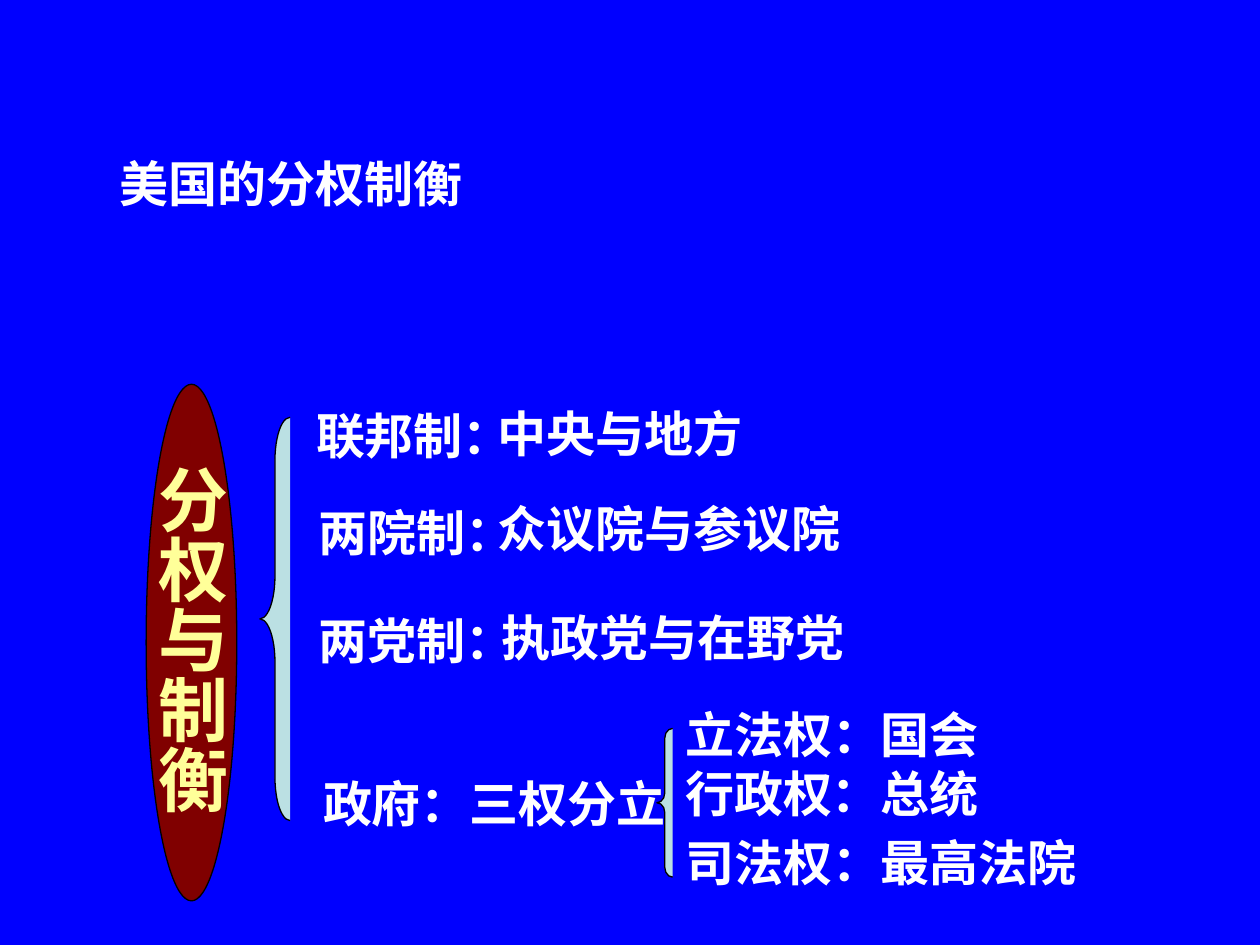
import pptx
import pptx.dml.color
import pptx.enum.lang
import pptx.enum.shapes
import pptx.enum.text
import pptx.util
from dataclasses import dataclass

Pt = pptx.util.Pt
Shape = pptx.enum.shapes.MSO_SHAPE


@dataclass(frozen=True)
class Theme:
    background: str = "0000FF"
    text: str = "FFFFFF"
    highlight: str = "FFFF99"
    oval: str = "800000"
    brace: str = "BBE0E3"
    outline: str = "000000"
    body_size: int = 28
    oval_size: int = 40
    title_font: str = "Noto Sans CJK SC"
    body_font: str = "Arial"
    oval_font: str = "DejaVu Sans"


theme = Theme()
rgb = pptx.dml.color.RGBColor.from_string

deck = pptx.Presentation()
deck.slide_width, deck.slide_height = Pt(720), Pt(540)
slide = deck.slides.add_slide(deck.slide_layouts[6])
slide.background.fill.solid()
slide.background.fill.fore_color.rgb = rgb(theme.background)


def add_text(text, *, left, top, width, height=41, size=theme.body_size,
             font=theme.body_font, color=theme.text, wrap=True, vertical=False):
    box = slide.shapes.add_textbox(Pt(left), Pt(top), Pt(width), Pt(height))
    frame = box.text_frame
    frame.word_wrap = wrap
    frame.auto_size = pptx.enum.text.MSO_AUTO_SIZE.SHAPE_TO_FIT_TEXT
    if vertical:
        frame._txBody.bodyPr.set("vert", "eaVert")
    run = frame.paragraphs[0].add_run()
    run.text = text
    run.font.name = font
    run.font.size = Pt(size)
    run.font.bold = True
    run.font.color.rgb = rgb(color)
    run.font.language_id = pptx.enum.lang.MSO_LANGUAGE_ID.SIMPLIFIED_CHINESE


def add_outlined(kind, left, top, width, height, fill):
    outlined = slide.shapes.add_shape(kind, Pt(left), Pt(top), Pt(width), Pt(height))
    outlined.shadow.inherit = False
    outlined.fill.solid()
    outlined.fill.fore_color.rgb = rgb(fill)
    outlined.line.color.rgb = rgb(theme.outline)
    outlined.line.width = Pt(0.75)
    return outlined


# Title
add_text("美国的分权制衡", left=61.2, top=84.2, width=213,
         font=theme.title_font, wrap=False)

# Systems, each with the two sides that balance
systems_brace = add_outlined(Shape.LEFT_BRACE, 148.5, 238.5, 17.25, 230.4, theme.brace)
systems_brace.adjustments[0] = 1.42
for system, system_left, system_top, system_width, sides, sides_left, sides_top, sides_width in [
    ("联邦制：", 173.5, 228.2, 106, "中央与地方", 277.2, 226.8, 183),
    ("两院制：", 175, 283.7, 101.5, "众议院与参议院", 277.2, 281.5, 232),
    ("两党制：", 175, 345.6, 101.5, "执政党与在野党", 279.5, 343.4, 230),
]:
    add_text(system, left=system_left, top=system_top, width=system_width)
    add_text(sides, left=sides_left, top=sides_top, width=sides_width)

# Government and its three powers
add_text("政府：三权分立", left=177.5, top=438.5, width=217)
powers_brace = add_outlined(Shape.LEFT_BRACE, 375.4, 416.2, 9, 85, theme.brace)
powers_brace.adjustments[0] = 0.62
for power, power_top, power_width in [
    ("立法权：国会", 398.9, 214),
    ("行政权：总统", 432.7, 235),
    ("司法权：最高法院", 472.3, 284),
]:
    add_text(power, left=384.5, top=power_top, width=power_width)

# Central idea, set vertically over the oval
add_outlined(Shape.OVAL, 83.5, 219.6, 51.8, 295.2, theme.oval)
add_text("分权与制衡", left=73.4, top=258.5, width=63.4, height=306,
         size=theme.oval_size, font=theme.oval_font, color=theme.highlight,
         vertical=True)

deck.save("out.pptx")
